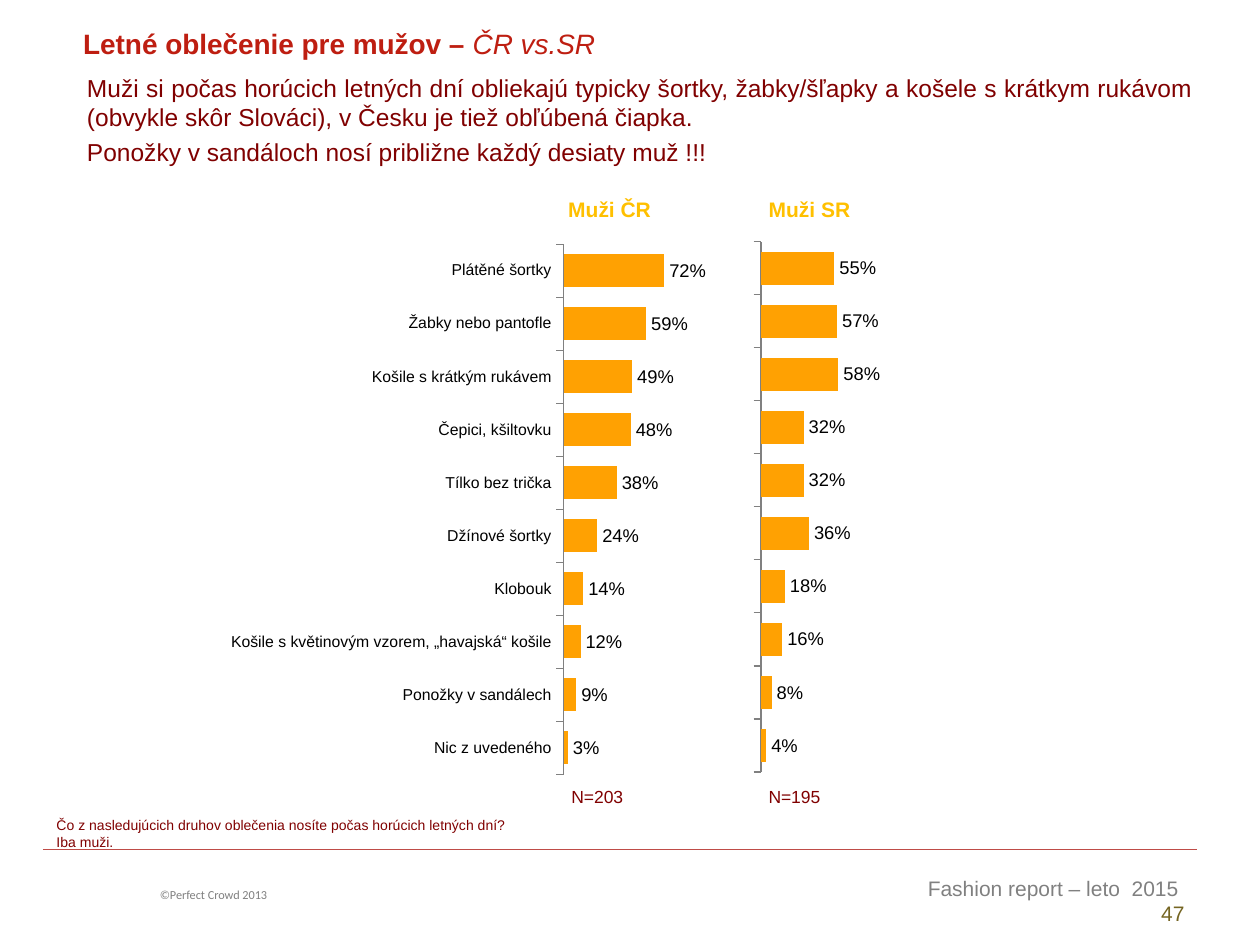
from lxml import etree
from pptx import Presentation
from pptx.chart.data import CategoryChartData
from pptx.dml.color import RGBColor
from pptx.enum.chart import (XL_CHART_TYPE, XL_LABEL_POSITION,
                             XL_TICK_LABEL_POSITION, XL_TICK_MARK)
from pptx.enum.shapes import MSO_CONNECTOR
from pptx.enum.text import MSO_ANCHOR, MSO_AUTO_SIZE, PP_ALIGN
from pptx.oxml.ns import qn
from pptx.util import Inches, Pt

BAR = XL_CHART_TYPE.BAR_CLUSTERED
OUT_END = XL_LABEL_POSITION.OUTSIDE_END
NO_LABELS, LOW = XL_TICK_LABEL_POSITION.NONE, XL_TICK_LABEL_POSITION.LOW
TICK_OUT, TICK_NONE = XL_TICK_MARK.OUTSIDE, XL_TICK_MARK.NONE
STRAIGHT = MSO_CONNECTOR.STRAIGHT
TOP, MIDDLE, BOTTOM = MSO_ANCHOR.TOP, MSO_ANCHOR.MIDDLE, MSO_ANCHOR.BOTTOM
NO_FIT = MSO_AUTO_SIZE.NONE
LEFT, CENTER, RIGHT = PP_ALIGN.LEFT, PP_ALIGN.CENTER, PP_ALIGN.RIGHT
JUSTIFY = PP_ALIGN.JUSTIFY

RED = RGBColor(0xBE, 0x1E, 0x11)
MAROON = RGBColor(0x80, 0x00, 0x00)
ROSE = RGBColor(0xBF, 0x4C, 0x48)
GOLD = RGBColor(0xFF, 0xC0, 0x00)
ORANGE = RGBColor(0xFF, 0xA1, 0x02)
OLIVE = RGBColor(0x75, 0x65, 0x22)
GRAY = RGBColor(0x80, 0x80, 0x80)
BLACK = RGBColor(0x00, 0x00, 0x00)

# Item, men in CR, men in SR; bars run from the bottom up
ITEMS = [
    ("Nic z uvedeného", 3, 4),
    ("Ponožky v sandálech", 9, 8),
    ("Košile s květinovým vzorem, „havajská“ košile", 12, 16),
    ("Klobouk", 14, 18),
    ("Džínové šortky", 24, 36),
    ("Tílko bez trička", 38, 32),
    ("Čepici, kšiltovku", 48, 32),
    ("Košile s krátkým rukávem", 49, 58),
    ("Žabky nebo pantofle", 59, 57),
    ("Plátěné šortky", 72, 55),
]


def place(shape, box):
    shape.left, shape.top, shape.width, shape.height = map(Inches, box)


def add_run(para, text, size, color, bold=False, italic=False, face="Arial"):
    run = para.add_run()
    run.text = text
    font = run.font
    font.name, font.size, font.bold, font.italic = face, Pt(size), bold, italic
    font.color.rgb = color


def set_frame(frame, anchor=TOP):
    frame.word_wrap = True
    frame.auto_size = NO_FIT
    frame.vertical_anchor = anchor


def add_text(slide, box):
    shape = slide.shapes.add_textbox(*map(Inches, box))
    set_frame(shape.text_frame)
    return shape.text_frame


def add_title(slide):
    title = slide.shapes.title
    place(title, (0.56, 0.16, 7.51, 0.37))
    set_frame(title.text_frame, MIDDLE)
    para = title.text_frame.paragraphs[0]
    para.alignment = LEFT
    add_run(para, "Letné oblečenie pre mužov – ", 16, RED, bold=True)
    add_run(para, "ČR vs.SR", 16, RED, italic=True)


def add_body(slide, lines):
    body = slide.placeholders[1]
    place(body, (0.59, 0.53, 8.98, 0.81))
    frame = body.text_frame
    set_frame(frame)
    for i, line in enumerate(lines):
        para = frame.add_paragraph() if i else frame.paragraphs[0]
        para.alignment = JUSTIFY
        para.space_before = Pt(2.8 if i else 0)
        props = para._p.get_or_add_pPr()
        props.set("marL", "0")
        props.set("indent", "0")
        etree.SubElement(props, qn("a:buNone"))
        add_run(para, line, 14, MAROON)


def set_plot(chart, box):
    """Fix the inner plot area as fractions of the chart."""
    area = chart._chartSpace.chart.plotArea
    for old in area.findall(qn("c:layout")):
        area.remove(old)
    layout = etree.Element(qn("c:layout"))
    manual = etree.SubElement(layout, qn("c:manualLayout"))
    parts = [("layoutTarget", "inner"), ("xMode", "edge"), ("yMode", "edge")]
    parts += zip("xywh", box)
    for tag, value in parts:
        etree.SubElement(manual, qn("c:" + tag)).set("val", str(value))
    area.insert(0, layout)


def add_bars(slide, box, plot_box, names, vals, show_names):
    data = CategoryChartData(number_format="0")
    data.categories = names
    data.add_series("Series 1", vals)
    chart = slide.shapes.add_chart(BAR, *map(Inches, box), data).chart
    chart.has_title = chart.has_legend = False
    chart.font.name, chart.font.size = "Arial", Pt(12)
    chart.font.color.rgb = BLACK
    set_plot(chart, plot_box)

    # Axes
    scale = chart.value_axis
    scale.minimum_scale, scale.maximum_scale = 0, 100
    scale.has_major_gridlines = False
    scale.visible = False
    axis = chart.category_axis
    axis.major_tick_mark, axis.minor_tick_mark = TICK_OUT, TICK_NONE
    axis.tick_label_position = LOW if show_names else NO_LABELS
    axis.tick_labels.font.size = Pt(9 if show_names else 11)
    axis.format.line.color.rgb = GRAY
    axis.format.line.width = Pt(0.75)

    # Bars and their labels
    plot = chart.plots[0]
    plot.gap_width = 60
    plot.vary_by_categories = False
    fill = plot.series[0].format.fill
    fill.solid()
    fill.fore_color.rgb = ORANGE
    plot.has_data_labels = True
    labels = plot.data_labels
    labels.show_value = True
    labels.number_format, labels.number_format_is_linked = '#,##0"%"', False
    labels.position = OUT_END
    labels.font.size = Pt(10.5)
    labels.font.color.rgb = BLACK


def add_row(slide, box, widths, cells, anchor, size, color, bold=False):
    table = slide.shapes.add_table(1, len(cells), *map(Inches, box)).table
    table.first_row = table.horz_banding = False
    for i, (text, align) in enumerate(cells):
        table.columns[i].width = Inches(widths[i])
        cell = table.cell(0, i)
        cell.fill.background()
        cell.vertical_anchor = anchor
        cell.margin_left = cell.margin_right = cell.margin_top = Inches(0.01)
        cell.margin_bottom = 0
        para = cell.text_frame.paragraphs[0]
        para.alignment = align
        add_run(para, text, size, color, bold)


def add_footer(slide):
    rule = slide.shapes.add_connector(
        STRAIGHT, *map(Inches, (0.34, 6.74, 9.5, 6.74)))
    rule.line.color.rgb = ROSE
    rule.line.width = Pt(0.75)
    etree.SubElement(rule._element.spPr, qn("a:effectLst"))

    owner = add_text(slide, (1.17, 6.99, 2.91, 0.22)).paragraphs[0]
    add_run(owner, "©Perfect Crowd 2013", 7, GRAY, face="Calibri")

    report = add_text(slide, (5.79, 6.9, 3.71, 0.5)).paragraphs[0]
    report.alignment = RIGHT
    add_run(report, "Fashion report – leto  2015 ", 12, GRAY)
    report.add_line_break()
    add_run(report, "47", 12, OLIVE)


def add_note(slide, lines):
    frame = add_text(slide, (0.35, 6.43, 9.06, 0.37))
    for i, line in enumerate(lines):
        para = frame.add_paragraph() if i else frame.paragraphs[0]
        add_run(para, line, 8, MAROON)


def main():
    deck = Presentation()
    deck.slide_width, deck.slide_height = Inches(10), Inches(7.5)
    slide = deck.slides.add_slide(deck.slide_layouts[1])

    add_footer(slide)
    add_title(slide)
    add_body(slide, [
        "Muži si počas horúcich letných dní obliekajú typicky šortky, "
        "žabky/šľapky a košele s krátkym rukávom (obvykle skôr Slováci), "
        "v Česku je tiež obľúbená čiapka. ",
        "Ponožky v sandáloch nosí približne každý desiaty muž !!!"])

    # Paired bar charts: only the left one names the items
    names, czech, slovak = zip(*ITEMS)
    ranks = [str(n + 1) for n in range(len(ITEMS))]
    add_bars(slide, (3.48, 1.6, 4.11, 4.9), (0.623, 0.065, 0.258, 0.859),
             ranks, slovak, False)
    add_bars(slide, (-2.19, 1.62, 8.28, 4.9), (0.805, 0.065, 0.134, 0.859),
             names, czech, True)

    # Heads above and sample sizes below the charts
    add_row(slide, (4.5, 1.46, 2.56, 0.3), (1.29, 1.27),
            [("Muži ČR", LEFT), ("Muži SR", CENTER)], BOTTOM, 12, GOLD, True)
    add_row(slide, (3.92, 6.22, 3.13, 0.21), (1.64, 1.49),
            [("N=203", CENTER), ("N=195", CENTER)], MIDDLE, 10, MAROON)

    add_note(slide, [
        "Čo z nasledujúcich druhov oblečenia nosíte počas horúcich "
        "letných dní?", "Iba muži."])
    deck.save("out.pptx")


if __name__ == "__main__":
    main()
